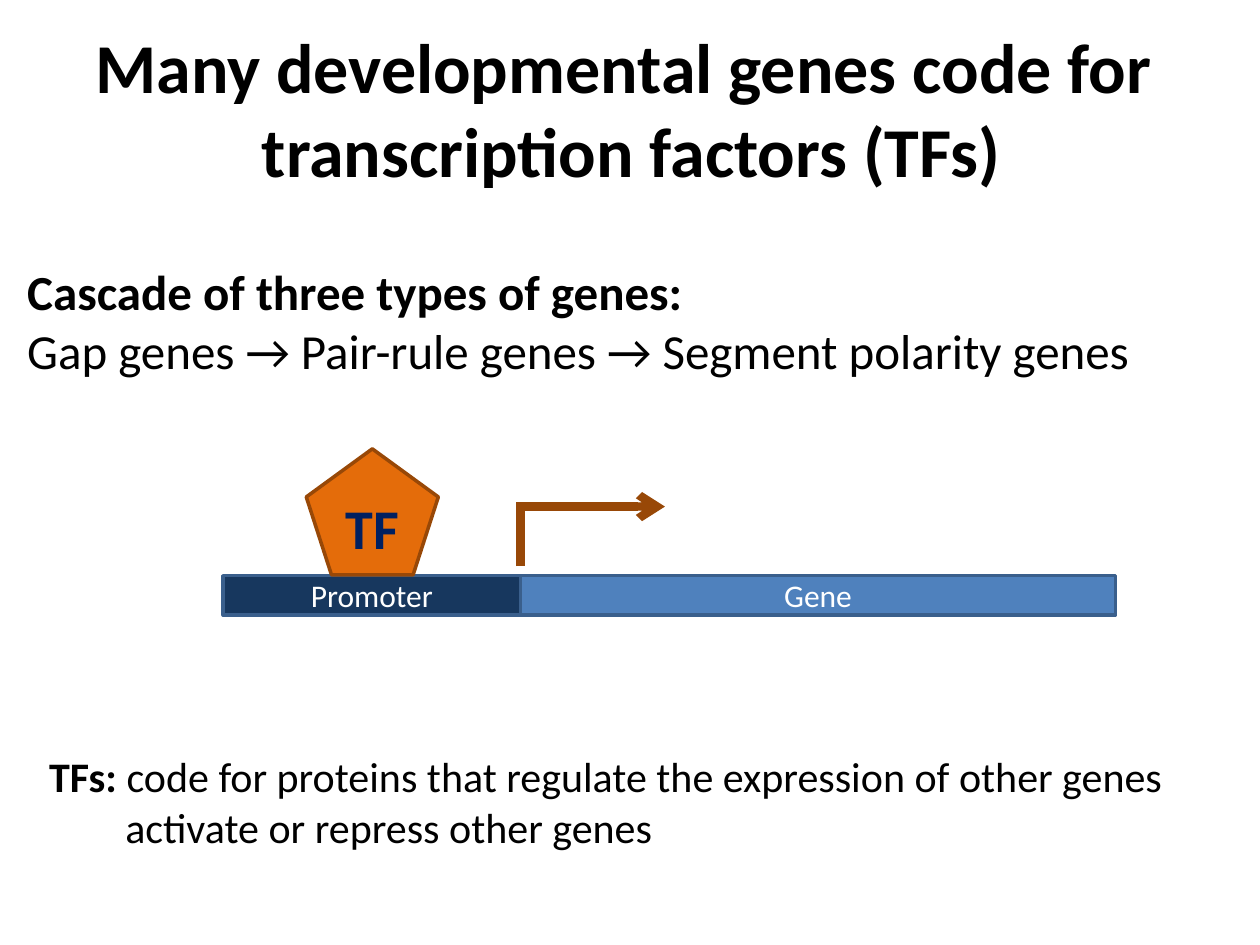
"""Build a slide on developmental genes that code for transcription factors."""
from dataclasses import dataclass

from lxml import etree
from pptx import Presentation
from pptx import util as u
from pptx.dml.color import RGBColor
from pptx.enum import shapes, text
from pptx.oxml.ns import qn

COLORS = {
    "black": "000000", "white": "FFFFFF", "navy": "002060",
    "gene": "4F81BD", "promoter": "17375E", "outline": "3A5F8C",
    "factor": "E46C0A", "brown": "984807",
}
FONT = "Calibri"
BAR_TOP, BAR_HEIGHT = 329, 22.5
START_X, ARROW_Y = 297.5, 289.5


@dataclass
class Part:
    label: str
    kind: shapes.MSO_SHAPE
    left: float
    top: float
    width: float
    height: float
    fill: str
    line: str
    color: str = "white"
    size: float = 18
    bold: bool = False


@dataclass
class Stroke:
    start: tuple[float, float]
    end: tuple[float, float]
    arrow: bool = False


PARTS = [
    Part("Gene", shapes.MSO_SHAPE.RECTANGLE, START_X, BAR_TOP, 340, BAR_HEIGHT,
         "gene", "outline"),
    Part("Promoter", shapes.MSO_SHAPE.RECTANGLE, START_X - 170, BAR_TOP, 170, BAR_HEIGHT,
         "promoter", "outline"),
    Part("TF", shapes.MSO_SHAPE.REGULAR_PENTAGON, 175, BAR_TOP - 72.5, 75.5, 72,
         "factor", "brown", "navy", 32, True),
]
STROKES = [
    Stroke((START_X, 323.5), (START_X, ARROW_Y)),
    Stroke((START_X - 2.5, ARROW_Y), (380, ARROW_Y), arrow=True),
]


def color(name: str) -> RGBColor:
    """Return the named colour."""
    return RGBColor.from_string(COLORS[name])


def write(para, words: str, *, size: float, bold: bool = False, ink: str = "black",
          align=text.PP_ALIGN.LEFT, indent: float = 0) -> None:
    """Add a formatted span to a paragraph."""
    para.alignment = align
    if indent:
        para._p.get_or_add_pPr().set("marL", str(u.Pt(indent)))
    span = para.add_run()
    span.text = words
    span.font.name = FONT
    span.font.size = u.Pt(size)
    span.font.bold = bold
    span.font.color.rgb = color(ink)


def place(box, left: float, top: float, width: float, height: float):
    """Position a text box and return its unwrapped, top-anchored frame."""
    box.left, box.top = u.Pt(left), u.Pt(top)
    box.width, box.height = u.Pt(width), u.Pt(height)
    frame = box.text_frame
    frame.word_wrap = False
    frame.auto_size = text.MSO_AUTO_SIZE.SHAPE_TO_FIT_TEXT
    frame.vertical_anchor = text.MSO_ANCHOR.TOP
    return frame


def draw_part(page, part: Part) -> None:
    """Draw one labelled shape of the gene diagram."""
    shape = page.shapes.add_shape(part.kind, u.Pt(part.left), u.Pt(part.top),
                                  u.Pt(part.width), u.Pt(part.height))
    shape.shadow.inherit = False
    shape.fill.solid()
    shape.fill.fore_color.rgb = color(part.fill)
    shape.line.color.rgb = color(part.line)
    shape.line.width = u.Pt(2)
    shape.text_frame.vertical_anchor = text.MSO_ANCHOR.MIDDLE
    write(shape.text_frame.paragraphs[0], part.label, size=part.size, bold=part.bold,
          ink=part.color, align=text.PP_ALIGN.CENTER)


def draw_stroke(page, stroke: Stroke) -> None:
    """Draw one line of the transcription start arrow."""
    line = page.shapes.add_connector(shapes.MSO_CONNECTOR.STRAIGHT,
                                     *map(u.Pt, stroke.start + stroke.end))
    line.line.color.rgb = color("brown")
    line.line.width = u.Pt(4.75)
    if stroke.arrow:
        etree.SubElement(line.line._get_or_add_ln(), qn("a:tailEnd"), type="arrow")
    etree.SubElement(line._element.spPr, qn("a:effectLst"))


def main() -> None:
    """Build and save the deck."""
    deck = Presentation()
    deck.slide_width, deck.slide_height = u.Pt(720), u.Pt(540)
    page = deck.slides.add_slide(deck.slide_layouts[5])

    title = place(page.shapes.title, 44, 10, 633.5, 104.5)
    heading = {"size": 40, "bold": True, "align": text.PP_ALIGN.CENTER}
    write(title.paragraphs[0], "Many developmental genes code for ", **heading)
    write(title.add_paragraph(), "transcription factors (TFs)", **heading)

    cascade = place(page.shapes.add_textbox(0, 0, 0, 0), 8.5, 146, 656, 75)
    write(cascade.paragraphs[0], "Cascade of three types of genes:", size=28, bold=True)
    write(cascade.add_paragraph(), "Gap genes → Pair-rule genes → Segment polarity genes",
          size=28)

    roles = place(page.shapes.add_textbox(0, 0, 0, 0), 21, 425.5, 656.5, 65.5)
    write(roles.paragraphs[0], "TFs:", size=24, bold=True)
    write(roles.paragraphs[0],
          " code for proteins that regulate the expression of other genes", size=24)
    write(roles.add_paragraph(), "activate or repress other genes", size=24, indent=43.5)

    for part in PARTS:
        draw_part(page, part)
    for stroke in STROKES:
        draw_stroke(page, stroke)
    deck.save("out.pptx")


if __name__ == "__main__":
    main()
